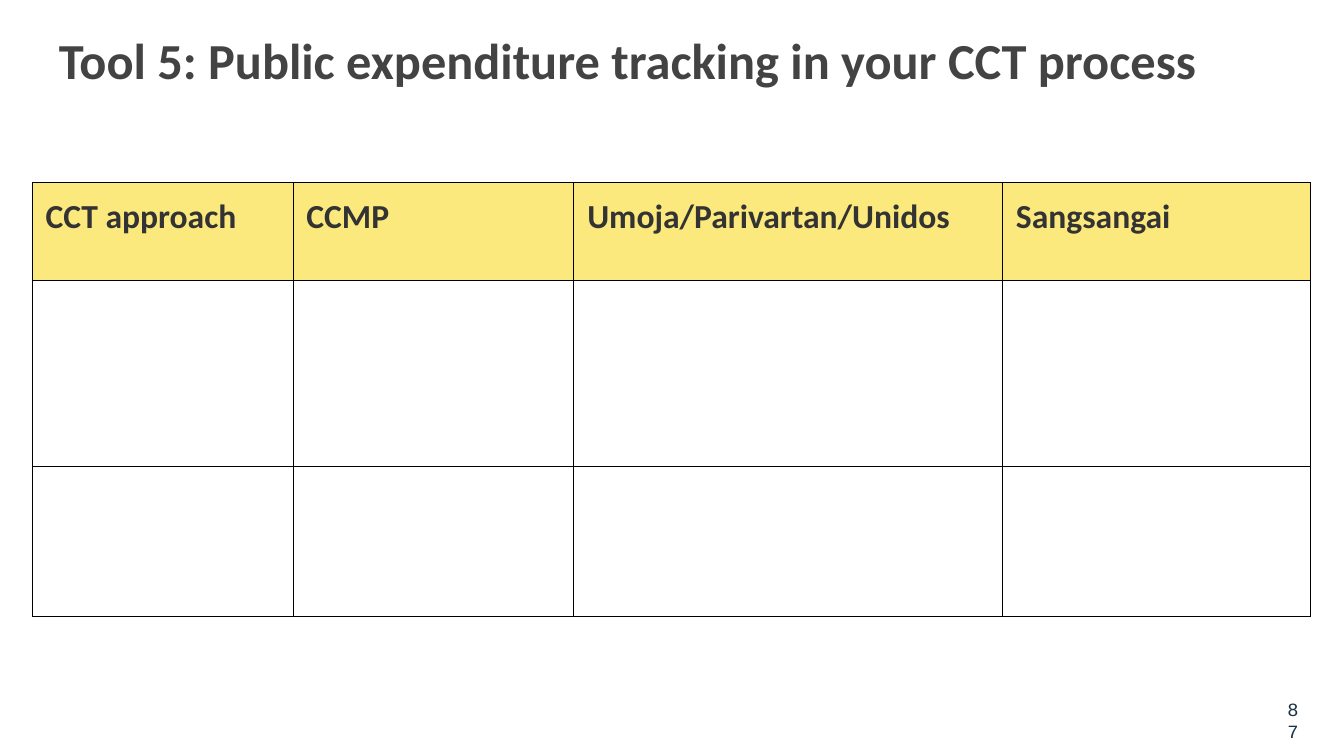
from lxml.etree import SubElement
from pptx import Presentation
from pptx.dml.color import RGBColor
from pptx.enum.text import MSO_ANCHOR, PP_ALIGN
from pptx.oxml.ns import qn
from pptx.util import Inches, Pt

TITLE = "Tool 5: Public expenditure tracking in your CCT process"
PAGE_NUMBER = "87"
HEADERS = ["CCT approach", "CCMP", "Umoja/Parivartan/Unidos", "Sangsangai"]
COLUMN_WIDTHS = [1.94, 2.09, 3.19, 2.29]
ROW_HEIGHTS = [0.73, 1.38, 1.12]
COLORS = {
    "title": "434343",
    "header_text": "333333",
    "header_fill": "FCE97D",
    "body_fill": "FFFFFF",
    "border": "000000",
    "page_number": "173145",
}
INSET = Inches(0.1)


def set_margins(target):
    target.margin_left = target.margin_right = INSET
    target.margin_top = target.margin_bottom = INSET


def add_text(paragraph, text, size, font_name, color, bold=False):
    run = paragraph.add_run()
    run.text = text
    run.font.size = Pt(size)
    run.font.name = font_name
    run.font.bold = bold
    run.font.color.rgb = RGBColor.from_string(COLORS[color])


def add_text_box(slide, left, top, width, height):
    box = slide.shapes.add_textbox(
        Inches(left), Inches(top), Inches(width), Inches(height)
    )
    frame = box.text_frame
    frame.word_wrap = True
    frame.vertical_anchor = MSO_ANCHOR.TOP
    set_margins(frame)
    return frame.paragraphs[0]


def style_cell(cell, fill):
    set_margins(cell)
    properties = cell._tc.get_or_add_tcPr()
    for side in ("a:lnL", "a:lnR", "a:lnT", "a:lnB"):
        line = SubElement(properties, qn(side), w=str(Pt(0.5)))
        solid = SubElement(line, qn("a:solidFill"))
        SubElement(solid, qn("a:srgbClr"), val=COLORS["border"])
    cell.fill.solid()
    cell.fill.fore_color.rgb = RGBColor.from_string(COLORS[fill])


def add_approach_table(slide):
    shape = slide.shapes.add_table(
        len(ROW_HEIGHTS), len(HEADERS), Inches(0.24), Inches(1.36),
        Inches(sum(COLUMN_WIDTHS)), Inches(sum(ROW_HEIGHTS)),
    )
    table = shape.table
    table.first_row = table.horz_banding = False
    for column, width in zip(table.columns, COLUMN_WIDTHS):
        column.width = Inches(width)
    for row, height in zip(table.rows, ROW_HEIGHTS):
        row.height = Inches(height)
        for cell in row.cells:
            style_cell(cell, "body_fill")
    for cell, header in zip(table.rows[0].cells, HEADERS):
        cell.fill.fore_color.rgb = RGBColor.from_string(COLORS["header_fill"])
        paragraph = cell.text_frame.paragraphs[0]
        add_text(paragraph, header, 18, "Calibri", "header_text", bold=True)


def main():
    presentation = Presentation()
    presentation.slide_width = Inches(10)
    presentation.slide_height = presentation.slide_width * 9 // 16
    slide = presentation.slides.add_slide(presentation.slide_layouts[6])

    page_paragraph = add_text_box(slide, 9.41, 5.09, 0.35, 0.3)
    page_paragraph.alignment = PP_ALIGN.RIGHT
    add_text(page_paragraph, PAGE_NUMBER, 10, "Courier New", "page_number")

    title_paragraph = add_text_box(slide, 0.34, 0.12, 9.6, 0.63)
    add_text(title_paragraph, TITLE, 27, "Calibri", "title", bold=True)

    add_approach_table(slide)
    presentation.save("out.pptx")


if __name__ == "__main__":
    main()
